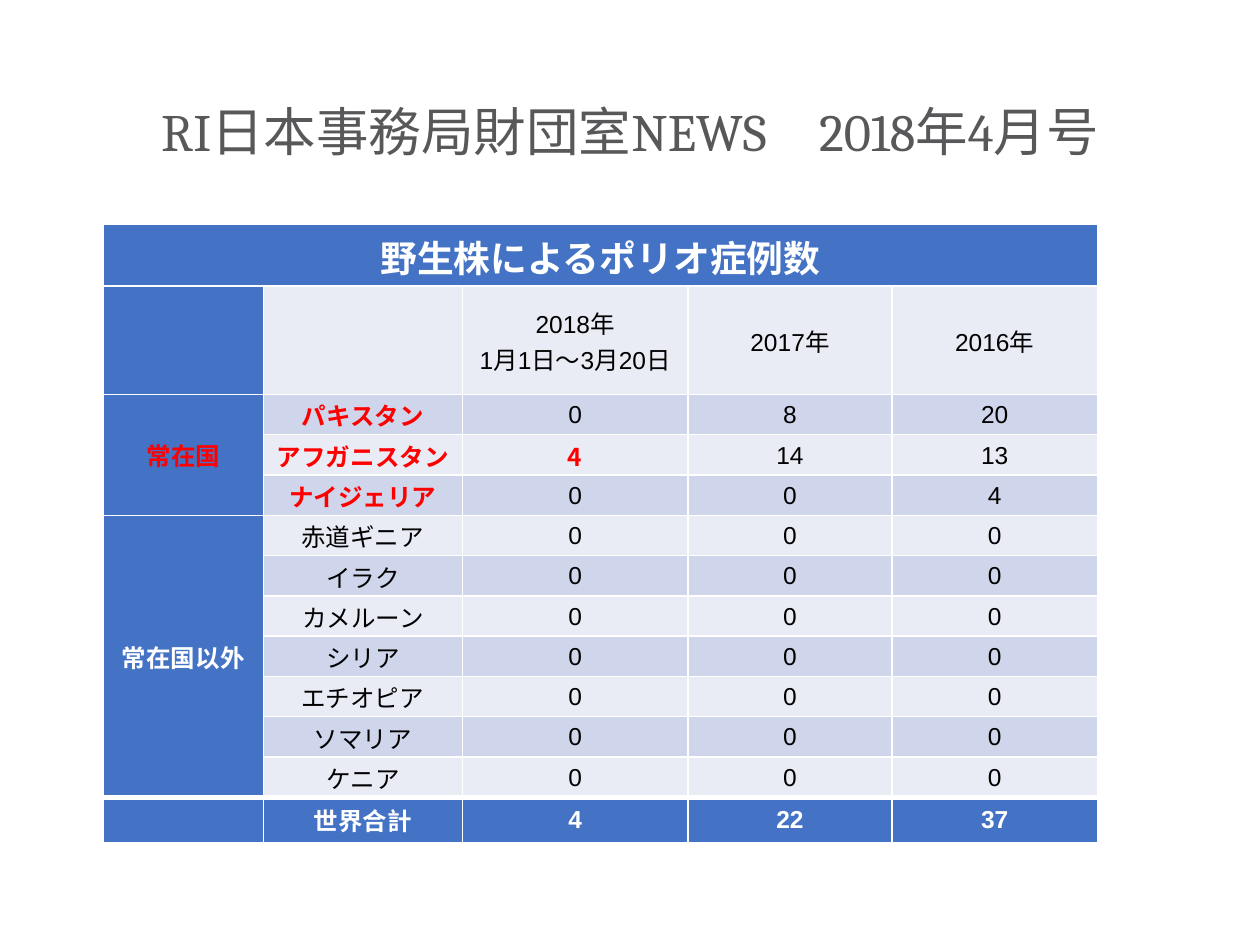
from lxml import etree
from pptx import Presentation
from pptx import util as u
from pptx.dml.color import RGBColor
from pptx.enum import text
from pptx.oxml.ns import qn

COLORS = {"title": "58585A", "head": "4472C4", "pale": "E9EBF5", "band": "CFD5EA",
          "white": "FFFFFF", "black": "000000", "alert": "FF0000"}
CJK = "Noto Sans CJK JP"
TITLE = [("RI", "Cambria"), ("日本事務局財団室", CJK), ("NEWS\u30002018".replace("\u3000", "　"), "Cambria"),
         ("年", CJK), ("4", "Cambria"), ("月号", CJK)]
TITLE[2] = ("NEWS　2018", "Cambria")
ROWS = [
    ["野生株によるポリオ症例数", "", "", "", ""],
    ["", "", "2018年\n1月1日～3月20日", "2017年", "2016年"],
    ["常在国", "パキスタン", "0", "8", "20"],
    ["", "アフガニスタン", "4", "14", "13"],
    ["", "ナイジェリア", "0", "0", "4"],
    ["常在国以外", "赤道ギニア", "0", "0", "0"],
    *[["", country, "0", "0", "0"]
      for country in ("イラク", "カメルーン", "シリア", "エチオピア", "ソマリア", "ケニア")],
    ["", "世界合計", "4", "22", "37"],
]
LAST = len(ROWS) - 1
COLUMN_WIDTHS = [1.27, 1.58, 1.79, 1.62, 1.63]
ROW_HEIGHTS = [0.49, 0.86] + [0.32] * (LAST - 2) + [0.36]
MERGES = [((0, 0), (0, 4)), ((2, 0), (4, 0)), ((5, 0), (LAST - 1, 0))]
ALERTS = {(2, 0), (2, 1), (3, 1), (3, 2), (4, 1)}
SIDES = ("left", "top", "right", "bottom")
WIDE = (0.07, 0.04, 0.07, 0.04)
TIGHT = (0.01, 0.01, 0.01, 0)


def set_attributes(target, values):
    """Set each named attribute of the target."""
    for name, value in values.items():
        setattr(target, name, value)


def add_run(paragraph, content, font, size, color, bold=False):
    """Add a run with its Latin and East Asian typefaces."""
    run = paragraph.add_run()
    run.text = content
    set_attributes(run.font, {"name": font, "size": u.Pt(size), "bold": bold})
    run.font.color.rgb = RGBColor.from_string(COLORS[color])
    properties = run._r.get_or_add_rPr()
    etree.SubElement(properties, qn("a:ea")).set("typeface", CJK)


def add_title(slide, width, height):
    """Add the centred headline."""
    shape = slide.shapes.add_textbox(int(width * 0.069), int(height * 0.1),
                                     int(width * 0.862), int(height * 0.084))
    set_attributes(shape.text_frame, {"word_wrap": True,
                                      "vertical_anchor": text.MSO_ANCHOR.MIDDLE})
    paragraph = shape.text_frame.paragraphs[0]
    set_attributes(paragraph, {"alignment": text.PP_ALIGN.CENTER, "line_spacing": 0.9})
    for content, font in TITLE:
        add_run(paragraph, content, font, 30, "title")


def set_borders(cell, widths):
    """Draw white borders of the given widths in points."""
    properties = cell._tc.get_or_add_tcPr()
    for position, (side, width) in enumerate(zip("LRTB", widths)):
        line = etree.Element(qn(f"a:ln{side}"), w=str(u.Pt(width)))
        fill = etree.SubElement(line, qn("a:solidFill"))
        etree.SubElement(fill, qn("a:srgbClr")).set("val", COLORS["white"])
        properties.insert(position, line)


def cell_format(row, column):
    """Return the fill, text colour, font, size, boldness and insets of a cell."""
    is_head = row in (0, LAST) or column == 0
    is_alert = (row, column) in ALERTS
    return {"fill": "head" if is_head else "pale" if row % 2 else "band",
            "color": "alert" if is_alert else "white" if is_head else "black",
            "font": CJK if (row, column) == (3, 2) else "Arial",
            "size": 21 if row == 0 else 14,
            "bold": is_head or is_alert,
            "insets": WIDE if is_head or (row == 1 and column > 2) else TIGHT}


def fill_cell(cell, content, row, column):
    """Format one table cell and write its lines."""
    style = cell_format(row, column)
    cell.fill.solid()
    cell.fill.fore_color.rgb = RGBColor.from_string(COLORS[style["fill"]])
    cell.vertical_anchor = text.MSO_ANCHOR.MIDDLE
    set_attributes(cell, {f"margin_{side}": u.Inches(inset)
                          for side, inset in zip(SIDES, style["insets"])})
    set_borders(cell, (1, 1, 3 if row == LAST else 1, 1))
    for index, line in enumerate(content.split("\n")):
        frame = cell.text_frame
        paragraph = frame.add_paragraph() if index else frame.paragraphs[0]
        paragraph.alignment = text.PP_ALIGN.CENTER
        if line:
            add_run(paragraph, line, style["font"], style["size"], style["color"], style["bold"])
        else:
            etree.SubElement(paragraph._p, qn("a:endParaRPr")).set("sz", "1400")


def add_case_table(slide, width, height):
    """Add the table of cases by country and year."""
    frame = slide.shapes.add_table(len(ROWS), len(COLUMN_WIDTHS),
                                   int(width * 0.082), int(height * 0.2375),
                                   u.Inches(sum(COLUMN_WIDTHS)), u.Inches(sum(ROW_HEIGHTS)))
    table = frame.table
    for column, size in zip(table.columns, COLUMN_WIDTHS):
        column.width = u.Inches(size)
    for row, size in zip(table.rows, ROW_HEIGHTS):
        row.height = u.Inches(size)
    for row, contents in enumerate(ROWS):
        for column, content in enumerate(contents):
            fill_cell(table.cell(row, column), content, row, column)
    for first, last in MERGES:
        table.cell(*first).merge(table.cell(*last))


def main():
    """Build and save the slide."""
    presentation = Presentation()
    set_attributes(presentation, {"slide_width": u.Inches(10), "slide_height": u.Inches(7.5)})
    slide = presentation.slides.add_slide(presentation.slide_layouts[6])
    size = presentation.slide_width, presentation.slide_height
    add_title(slide, *size)
    add_case_table(slide, *size)
    presentation.save("out.pptx")


if __name__ == "__main__":
    main()
